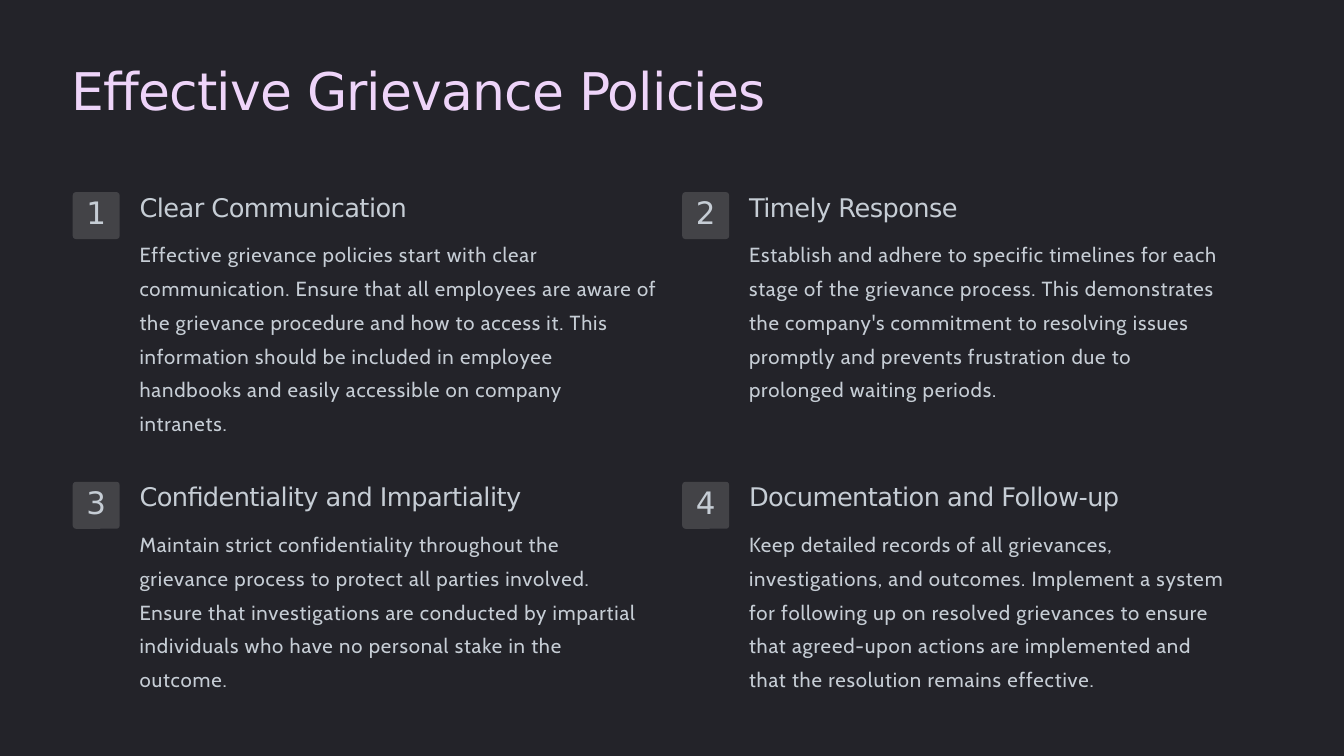
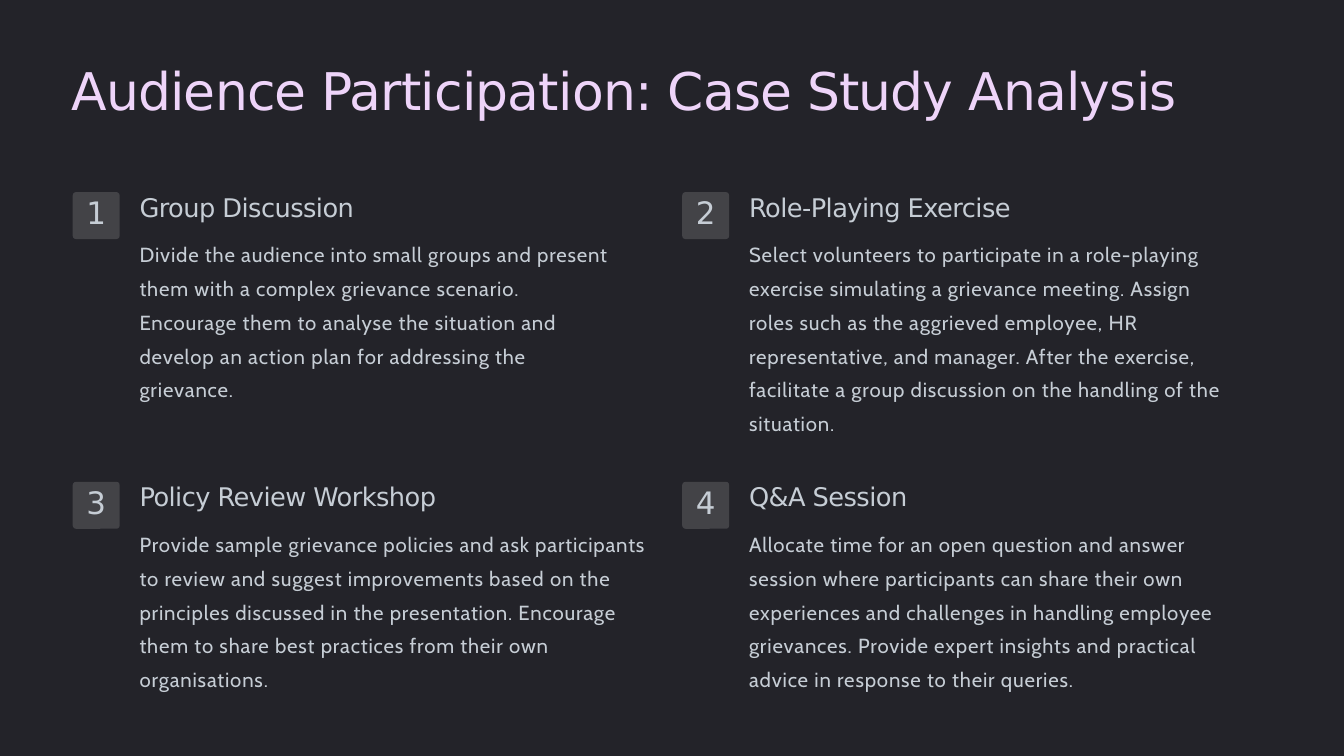
from pptx import Presentation
from pptx.dml.color import RGBColor
from pptx.enum.shapes import MSO_SHAPE as Shape
from pptx.enum.text import MSO_ANCHOR as Anchor, PP_ALIGN as Align
from pptx.util import Cm, Pt

BACKGROUND, TITLE, TEXT, BADGE = "232329", "EED4F9", "C6CDD5", "434347"
HEADING_FONT, BODY_FONT = "DejaVu Sans", "Cabin"

COLUMNS, ROWS = (2.2, 20.63), (5.81, 14.57)
BADGE_SIZE = 1.42
TEXT_OFFSET = 2.02
CARD_HEIGHT = 6.45

# Each card: heading, body, text width in cm
SLIDES = [
    ("Effective Grievance Policies", [
        ("Clear Communication",
         "Effective grievance policies start with clear communication. Ensure that all "
         "employees are aware of the grievance procedure and how to access it. This "
         "information should be included in employee handbooks and easily accessible "
         "on company\vintranets.", 15.75),
        ("Timely Response",
         "Establish and adhere to specific timelines for each stage of the grievance "
         "process. This demonstrates the company's commitment to resolving issues "
         "promptly and prevents frustration due to prolonged waiting periods.", 14.6),
        ("Confidentiality and Impartiality",
         "Maintain strict confidentiality throughout the grievance process to protect "
         "all parties involved. Ensure that investigations are conducted by impartial "
         "individuals who have no personal stake in the outcome.", 15.1),
        ("Documentation and Follow-up",
         "Keep detailed records of all grievances, investigations, and outcomes. "
         "Implement a system for following up on resolved grievances to ensure that "
         "agreed-upon actions are implemented and that the resolution remains "
         "effective.", 14.6),
    ]),
    ("Audience Participation: Case Study Analysis", [
        ("Group Discussion",
         "Divide the audience into small groups and present them with a complex "
         "grievance scenario. Encourage them to analyse the situation and develop an "
         "action plan for addressing the grievance.", 14.6),
        ("Role-Playing Exercise",
         "Select volunteers to participate in a role-playing exercise simulating a "
         "grievance meeting. Assign roles such as the aggrieved employee, HR "
         "representative, and manager. After the exercise, facilitate a group "
         "discussion on the handling of the situation.", 14.9),
        ("Policy Review Workshop",
         "Provide sample grievance policies and ask participants to review and suggest "
         "improvements based on the principles discussed in the presentation. "
         "Encourage them to share best practices from their own organisations.", 15.75),
        ("Q&A Session",
         "Allocate time for an open question and answer session where participants can "
         "share their own experiences and challenges in handling employee grievances. "
         "Provide expert insights and practical advice in response to their queries.",
         14.6),
    ]),
]


def color(value):
    return RGBColor.from_string(value)


def format_text(shape, styles):
    """Style paragraphs in turn: font, size, colour, tracking, space before, line spacing."""
    frame = shape.text_frame
    frame.word_wrap = True
    frame.vertical_anchor = Anchor.TOP
    frame.margin_left = frame.margin_right = frame.margin_bottom = 0
    frame.margin_top = Cm(0.03)
    for paragraph, style in zip(frame.paragraphs, styles):
        font, size, text_color, tracking, before, line_spacing = style
        paragraph.alignment = Align.LEFT
        paragraph.space_before = Pt(before)
        paragraph.line_spacing = line_spacing
        for run in paragraph.runs:
            run.font.name = font
            run.font.size = Pt(size)
            run.font.color.rgb = color(text_color)
            run.font._element.set("spc", str(round(tracking * 100)))


TITLE_STYLE = (HEADING_FONT, 44.5, TITLE, -0.7, 1.1, 1.0)
NUMBER_STYLE = (HEADING_FONT, 26.5, TEXT, 0, 1, 1.0)
HEADING_STYLE = (HEADING_FONT, 22, TEXT, -0.45, 0.9, 1.0)
BODY_STYLE = (BODY_FONT, 17.5, TEXT, 0.7, 9.4, 1.38)

presentation = Presentation()
presentation.slide_width, presentation.slide_height = Cm(40.64), Cm(22.86)
master_fill = presentation.slide_master.background.fill
master_fill.solid()
master_fill.fore_color.rgb = color(BACKGROUND)
title_only = presentation.slide_layouts[5]

for title_text, cards in SLIDES:
    slide = presentation.slides.add_slide(title_only)
    title = slide.shapes.title
    title.left, title.top, title.width, title.height = Cm(2.16), Cm(1.75), Cm(35.5), Cm(1.93)
    title.text_frame.text = title_text
    format_text(title, [TITLE_STYLE])

    for index, (heading, body, width) in enumerate(cards):
        left, top = COLUMNS[index % 2], ROWS[index // 2]

        badge = slide.shapes.add_shape(
            Shape.ROUNDED_RECTANGLE, Cm(left), Cm(top), Cm(BADGE_SIZE), Cm(BADGE_SIZE))
        badge.adjustments[0] = 0.07
        badge.shadow.inherit = False
        badge.fill.solid()
        badge.fill.fore_color.rgb = color(BADGE)
        badge.line.fill.background()
        badge.text_frame.text = str(index + 1)
        format_text(badge, [NUMBER_STYLE])
        badge.text_frame.paragraphs[0].alignment = Align.CENTER

        card = slide.shapes.add_textbox(
            Cm(left + TEXT_OFFSET), Cm(top - 0.05), Cm(width), Cm(CARD_HEIGHT))
        card.text_frame.text = heading
        card.text_frame.add_paragraph().text = body
        format_text(card, [HEADING_STYLE, BODY_STYLE])

presentation.save("out.pptx")
